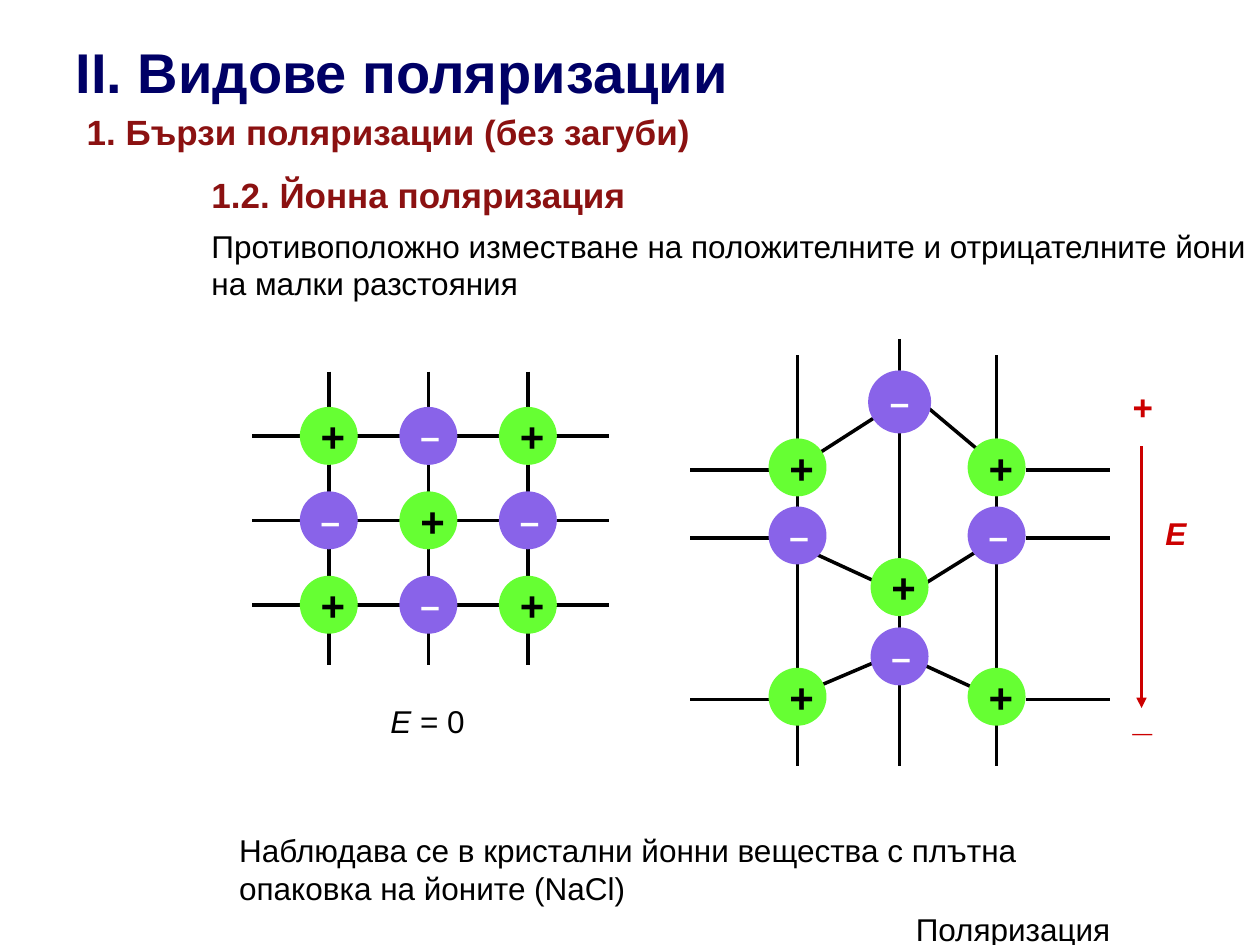
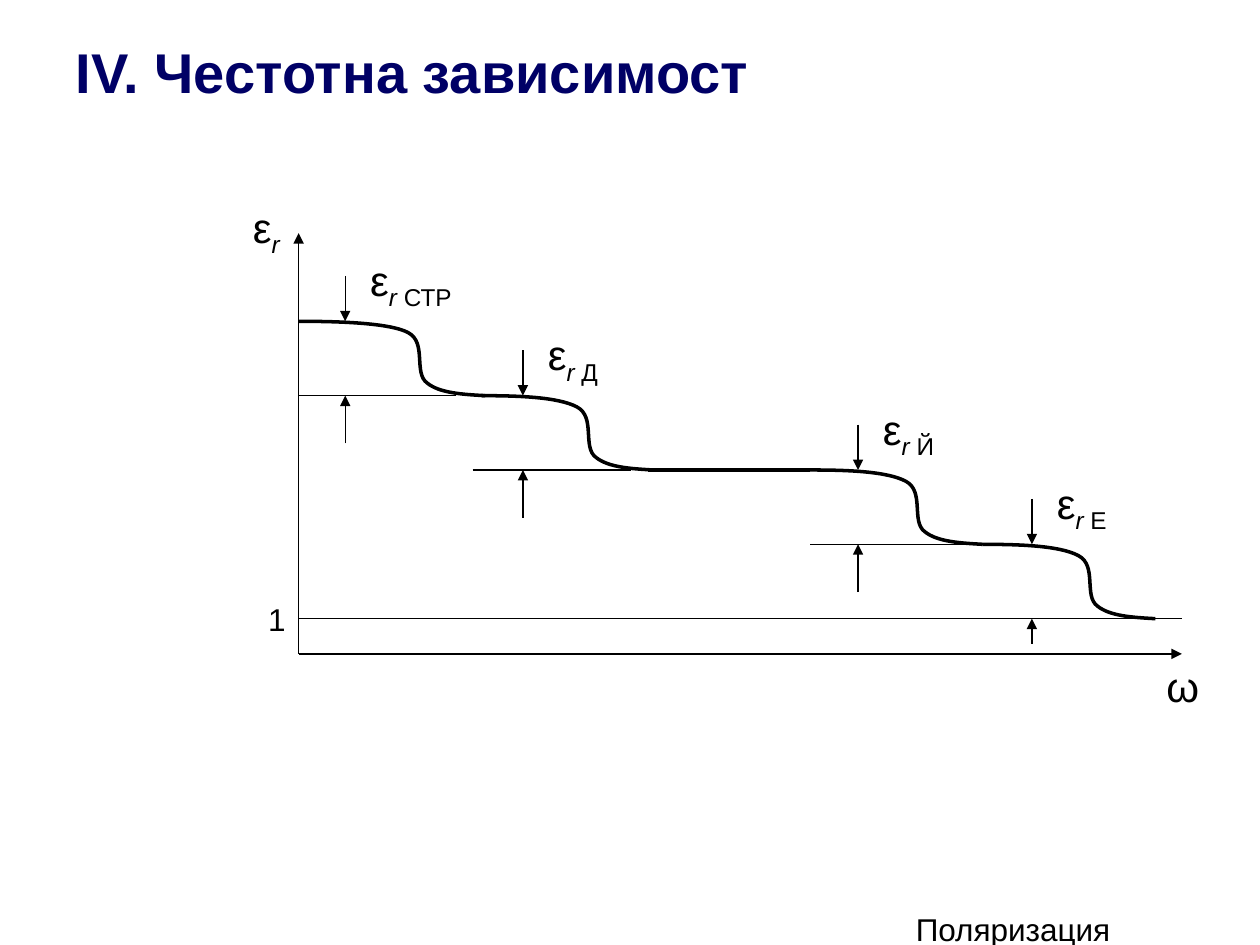
import pptx
import pptx.dml.color
import pptx.enum.shapes
import pptx.enum.text
import pptx.oxml.ns
import pptx.oxml.xmlchemy
import pptx.util

Inches = pptx.util.Inches
Pt = pptx.util.Pt
RGBColor = pptx.dml.color.RGBColor
OxmlElement = pptx.oxml.xmlchemy.OxmlElement
qn = pptx.oxml.ns.qn

FONT = "Arial"
BLACK = RGBColor(0x00, 0x00, 0x00)
WHITE = RGBColor(0xFF, 0xFF, 0xFF)
NAVY = RGBColor(0x00, 0x00, 0x66)
MAROON = RGBColor(0x8B, 0x11, 0x11)
RED = RGBColor(0xCC, 0x00, 0x00)
GREEN = RGBColor(0x66, 0xFF, 0x33)
VIOLET = RGBColor(0x89, 0x63, 0xE9)

ION = 0.46
LEVEL_DROP = 0.59
# Control points of one falling step: a start and three cubic segments
STEP = [(0, 0), (0.29, 0), (0.61, 0.01), (0.76, 0.09), (0.91, 0.17), (0.8, 0.41),
        (0.91, 0.49), (1.01, 0.57), (1.19, 0.58), (1.37, 0.59)]


def add_run(p, text, size=18, color=BLACK, bold=False, italic=False, sub=False):
    r = p.add_run()
    r.text = text
    r.font.name = FONT
    r.font.size = Pt(size)
    r.font.color.rgb = color
    r.font.bold = bold
    r.font.italic = italic
    if sub:
        r.font._element.set("baseline", "-25000")


def add_text(shapes, left, top, width, height, text="", **style):
    """Add a text box and return its paragraph, for further runs."""
    tb = shapes.add_textbox(Inches(left), Inches(top), Inches(width), Inches(height))
    tb.text_frame.word_wrap = True
    p = tb.text_frame.paragraphs[0]
    if text:
        add_run(p, text, **style)
    return p


def add_line(shapes, x1, y1, x2, y2, width=2, color=BLACK, arrow=False):
    c = shapes.add_connector(pptx.enum.shapes.MSO_CONNECTOR.STRAIGHT,
                             Inches(x1), Inches(y1), Inches(x2), Inches(y2))
    c.line.color.rgb = color
    c.line.width = Pt(width)
    if arrow:
        tail = OxmlElement("a:tailEnd")
        tail.set("type", "triangle")
        c.line._get_or_add_ln().append(tail)
    c._element.spPr.append(OxmlElement("a:effectLst"))


def add_ion(shapes, x, y, sign, diameter=ION):
    """Add an ion centred on x, y."""
    sp = shapes.add_shape(pptx.enum.shapes.MSO_SHAPE.OVAL,
                          Inches(x - diameter / 2), Inches(y - diameter / 2),
                          Inches(diameter), Inches(diameter))
    sp.shadow.inherit = False
    sp.fill.solid()
    sp.fill.fore_color.rgb = GREEN if sign == "+" else VIOLET
    sp.line.fill.background()
    tf = sp.text_frame
    tf.vertical_anchor = pptx.enum.text.MSO_ANCHOR.MIDDLE
    p = tf.paragraphs[0]
    p.alignment = pptx.enum.text.PP_ALIGN.CENTER
    if sign == "+":
        add_run(p, sign, size=24, bold=True)
    else:
        add_run(p, sign, size=20, color=WHITE, bold=True)


def add_slide(prs, title):
    """Add a slide with the shared title and footer."""
    s = prs.slides.add_slide(prs.slide_layouts[5])
    sp = s.shapes.title
    sp.left, sp.top, sp.width, sp.height = map(Inches, (0.5, 0.25, 5.6, 0.63))
    tf = sp.text_frame
    tf.auto_size = pptx.enum.text.MSO_AUTO_SIZE.NONE
    tf.vertical_anchor = pptx.enum.text.MSO_ANCHOR.TOP
    p = tf.paragraphs[0]
    p.alignment = pptx.enum.text.PP_ALIGN.LEFT
    add_run(p, title, size=32, color=NAVY, bold=True)
    add_text(s.shapes, 7.17, 7.17, 2.33, 0.27, "Поляризация")
    return s


def draw_regular_lattice(shapes, left, top):
    width, height = 2.83, 2.33
    columns = [left + 0.61 + 0.79 * i for i in range(3)]
    rows = [top + 0.51 + 0.67 * i for i in range(3)]
    for x in columns:
        add_line(shapes, x, top, x, top + height)
    for y in rows:
        add_line(shapes, left, y, left + width, y)
    for i, x in enumerate(columns):
        for j, y in enumerate(rows):
            add_ion(shapes, x, y, "–" if (i + j) % 2 else "+")
    p = add_text(shapes, left + 1, top + 2.57, 0.83, 0.4, "Е", italic=True)
    add_run(p, " = 0")


def draw_shifted_lattice(shapes, left, top):
    outer, middle = (0.85, 2.43), 1.66
    side_rows = [(1.02, "+"), (1.56, "–"), (2.84, "+")]
    side_bonds = [(0.13, 0.82), (1.22, 1.38), (1.79, 2.65), (3.05, 3.39)]
    middle_bonds = [(0, 0.33), (0.67, 1.79), (2.17, 2.34), (2.74, 3.39)]
    diagonals = [(1.53, 0.58, 1, 0.92), (1.83, 0.5, 2.33, 0.92),
                 (1, 1.71, 1.5, 1.94), (2.33, 1.65, 1.8, 1.98),
                 (1.5, 2.55, 0.96, 2.78), (1.77, 2.55, 2.27, 2.78)]

    bonds = list(diagonals)
    for y, _ in side_rows:
        bonds += [(0, y + 0.02, 0.67, y + 0.02), (2.66, y + 0.02, 3.33, y + 0.02)]
    for x in outer:
        bonds += [(x, y1, x, y2) for y1, y2 in side_bonds]
    bonds += [(middle, y1, middle, y2) for y1, y2 in middle_bonds]
    for x1, y1, x2, y2 in bonds:
        add_line(shapes, left + x1, top + y1, left + x2, top + y2)

    for x in outer:
        for y, sign in side_rows:
            add_ion(shapes, left + x, top + y, sign)
    for y, sign, diameter in [(0.5, "–", 0.5), (1.97, "+", ION), (2.52, "–", ION)]:
        add_ion(shapes, left + middle, top + y, sign, diameter)


def draw_field(shapes, left, top):
    """Draw the field arrow from plus to minus."""
    add_text(shapes, left, top, 0.4, 0.43, "+", size=20, color=RED, bold=True)
    add_line(shapes, left + 0.17, top + 0.53, left + 0.17, top + 2.61,
             width=1.5, color=RED, arrow=True)
    add_text(shapes, left + 0.26, top + 1.02, 0.44, 0.4, "Е",
             color=RED, bold=True, italic=True)
    add_text(shapes, left, top + 2.47, 0.4, 0.43, "_", size=20, color=RED, bold=True)


def build_ionic_slide(prs):
    s = add_slide(prs, "ІІ. Видове поляризации")
    heading = dict(size=20, color=MAROON, bold=True)
    add_text(s.shapes, 0.59, 0.83, 5.1, 0.43, "1. Бързи поляризации (без загуби)", **heading)
    add_text(s.shapes, 1.58, 1.33, 3.6, 0.43, "1.2. Йонна поляризация", **heading)
    add_text(s.shapes, 1.58, 1.75, 8.41, 0.7,
             "Противоположно изместване на положителните и отрицателните йони "
             "на малки разстояния")
    add_text(s.shapes, 1.8, 6.55, 6.74, 0.7,
             "Наблюдава се в кристални йонни вещества с плътна опаковка на йоните (NaCl)")
    draw_regular_lattice(s.shapes.add_group_shape().shapes, 2, 2.95)
    polarized = s.shapes.add_group_shape().shapes
    draw_shifted_lattice(polarized, 5.48, 2.69)
    draw_field(polarized, 8.89, 3.01)


def draw_step(shapes, left, top, stretch):
    """Draw one smooth step, its upper plateau lengthened by stretch."""
    points = [(left + x + (stretch if i > 1 else 0), top + y)
              for i, (x, y) in enumerate(STEP)]
    builder = shapes.build_freeform(Inches(points[0][0]), Inches(points[0][1]))
    builder.add_line_segments([(Inches(x), Inches(y)) for x, y in points[1:]], close=False)
    sp = builder.convert_to_shape()
    sp.shadow.inherit = False
    sp.fill.background()
    sp.line.color.rgb = BLACK
    sp.line.width = Pt(2)
    # Each three straight segments become one cubic curve
    segments = list(sp._element.iter(qn("a:lnTo")))
    for i in range(0, len(segments), 3):
        curve = OxmlElement("a:cubicBezTo")
        segments[i].addprevious(curve)
        for segment in segments[i:i + 3]:
            curve.append(segment[0])
            segment.getparent().remove(segment)


def add_epsilon(shapes, left, top, width, suffix=""):
    p = add_text(shapes, left, top, width, 0.5, "ε", size=24)
    add_run(p, "r " if suffix else "r", size=24, italic=True, sub=True)
    if suffix:
        add_run(p, suffix, size=24, sub=True)


def draw_dispersion(shapes, left, top):
    """Draw permittivity against frequency; left, top is the tip of the vertical axis."""
    width, height, thin = 7.01, 3.34, 0.75
    right, bottom = left + width, top + height
    add_line(shapes, left, bottom, left, top, thin, arrow=True)
    add_line(shapes, left, bottom, right, bottom, thin, arrow=True)
    add_epsilon(shapes, left - 0.46, top - 0.3, 0.5)
    add_text(shapes, left - 0.34, top + 2.86, 0.38, 0.4, "1")
    add_text(shapes, left + 6.79, bottom, 0.5, 0.5, "ω", size=24)

    # suffix, curve start, stretch, arrows, guide start, guide end, lower arrow length
    steps = [("СТР", 0, 0.11, 0.37, 0, 1.25, 0.38),
             ("Д", 1.45, 0, 1.78, 1.38, 2.64, 0.38),
             ("Й", 4.06, 0, 4.44, 4.06, 5.56, 0.38),
             ("Е", 5.43, 0, 5.82, 0, width, 0.2)]
    for i, (suffix, start, stretch, arrow, guide, guide_end, tail) in enumerate(steps):
        upper = top + 0.7 + LEVEL_DROP * i
        lower = upper + LEVEL_DROP
        x = left + arrow
        add_line(shapes, left + guide, lower, left + guide_end, lower, thin)
        draw_step(shapes, left + start, upper, stretch)
        add_line(shapes, x, upper - 0.36, x, upper, thin, arrow=True)
        add_line(shapes, x, lower + tail, x, lower, thin, arrow=True)
        add_epsilon(shapes, x + 0.1, upper - 0.58, 0.93 if len(suffix) > 1 else 0.64, suffix)
    plateau = top + 0.7 + 2 * LEVEL_DROP
    add_line(shapes, left + 2.77, plateau, left + 4.06, plateau)


def build_frequency_slide(prs):
    s = add_slide(prs, "ІV. Честотна зависимост")
    draw_dispersion(s.shapes.add_group_shape().shapes, 2.37, 1.85)


def main():
    prs = pptx.Presentation()
    prs.slide_width, prs.slide_height = Inches(10), Inches(7.5)
    build_ionic_slide(prs)
    build_frequency_slide(prs)
    prs.save("out.pptx")


if __name__ == "__main__":
    main()
